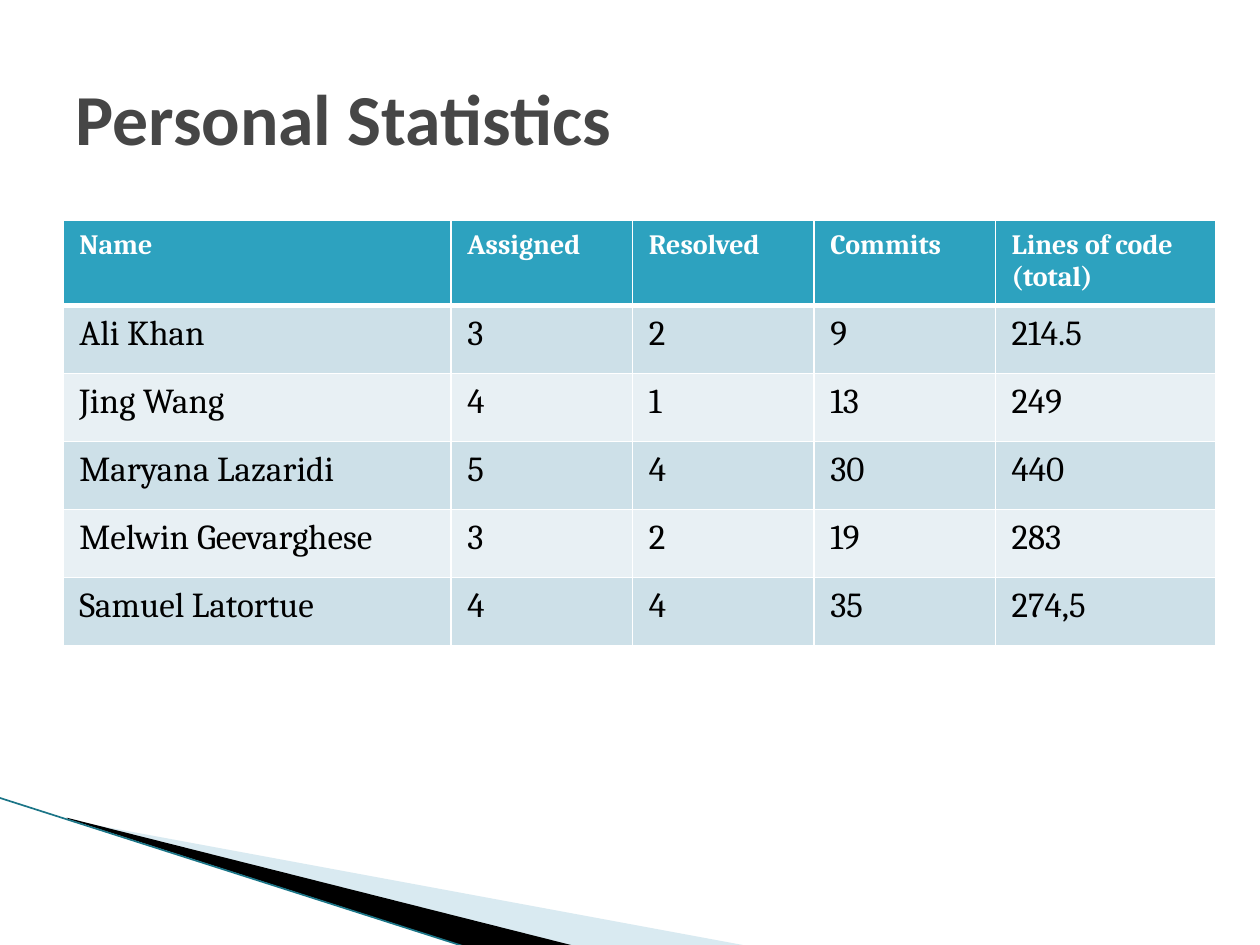
"""Build the Personal Statistics slide with its table and corner ornament."""
import dataclasses

import lxml.etree
import pptx
import pptx.dml.color
import pptx.enum.shapes
import pptx.enum.text
import pptx.oxml.ns
import pptx.util

Inches = pptx.util.Inches
Pt = pptx.util.Pt
qn = pptx.oxml.ns.qn


@dataclasses.dataclass(frozen=True)
class Theme:
    heading_font: str = "Calibri"
    body_font: str = "Cambria"
    title_size: int = 41
    header_size: int = 16
    body_size: int = 20
    title: str = "464646"
    header: str = "2DA2BF"
    bands: tuple = ("CDE0E8", "E8F0F4")
    white: str = "FFFFFF"
    black: str = "000000"
    pale: str = "A0CBDC"
    teal: str = "1B7587"


def rgb(value):
    return pptx.dml.color.RGBColor.from_string(value)


def set_attrs(obj, values):
    for name, value in values.items():
        setattr(obj, name, value)


class SlideBuilder:
    def __init__(self, slide, theme):
        self.slide = slide
        self.theme = theme

    def add_text(self, tf, text, color, **font):
        r = tf.paragraphs[0].add_run()
        r.text = text
        set_attrs(r.font, font)
        r.font.color.rgb = rgb(color)

    def title(self, text, left, top, width, height):
        t = self.theme
        box = self.slide.shapes.add_textbox(
            Inches(left), Inches(top), Inches(width), Inches(height))
        tf = box.text_frame
        set_attrs(tf, {"word_wrap": True,
                       "vertical_anchor": pptx.enum.text.MSO_ANCHOR.MIDDLE})
        self.add_text(tf, text, t.title, name=t.heading_font,
                      size=Pt(t.title_size), bold=True)

    def polygon(self, points, color, alpha=None):
        pts = [(Inches(x), Inches(y)) for x, y in points]
        fb = self.slide.shapes.build_freeform(*pts[0])
        fb.add_line_segments(pts[1:], close=True)
        sp = fb.convert_to_shape()
        sp.shadow.inherit = False
        sp.fill.solid()
        sp.fill.fore_color.rgb = rgb(color)
        sp.line.fill.background()
        if alpha is not None:
            clr = sp._element.spPr.find(".//" + qn("a:srgbClr"))
            lxml.etree.SubElement(clr, qn("a:alpha"), val=str(alpha * 1000))

    def line(self, x1, y1, x2, y2, color, width):
        cx = self.slide.shapes.add_connector(
            pptx.enum.shapes.MSO_CONNECTOR.STRAIGHT,
            Inches(x1), Inches(y1), Inches(x2), Inches(y2))
        cx.line.color.rgb = rgb(color)
        cx.line.width = Pt(width)
        lxml.etree.SubElement(cx._element.spPr, qn("a:effectLst"))

    def borders(self, cell, **widths):
        tc_pr = cell._tc.get_or_add_tcPr()
        for side in "LRTB":
            ln = lxml.etree.SubElement(
                tc_pr, qn("a:ln" + side), w=str(int(Pt(widths.get(side, 1)))))
            fill = lxml.etree.SubElement(ln, qn("a:solidFill"))
            lxml.etree.SubElement(fill, qn("a:srgbClr"), val=self.theme.white)

    def table(self, rows, left, top, col_widths, row_heights):
        t = self.theme
        tbl = self.slide.shapes.add_table(
            len(rows), len(col_widths), Inches(left), Inches(top),
            Inches(sum(col_widths)), Inches(sum(row_heights))).table
        for col, width in zip(tbl.columns, col_widths):
            col.width = Inches(width)
        margins = {"margin_left": Inches(0.13), "margin_right": Inches(0.13),
                   "margin_top": Inches(0.07), "margin_bottom": Inches(0.07)}
        for i, values in enumerate(rows):
            tbl.rows[i].height = Inches(row_heights[i])
            head = i == 0
            heavy = {0: {"B": 3}, 1: {"T": 3}}.get(i, {})
            for j, text in enumerate(values):
                cell = tbl.cell(i, j)
                set_attrs(cell, margins)
                self.borders(cell, **heavy)
                cell.fill.solid()
                cell.fill.fore_color.rgb = rgb(
                    t.header if head else t.bands[(i - 1) % 2])
                self.add_text(cell.text_frame, text,
                              t.white if head else t.black,
                              name=t.body_font, bold=head,
                              size=Pt(t.header_size if head else t.body_size))


def main():
    prs = pptx.Presentation()
    set_attrs(prs, {"slide_width": Inches(10), "slide_height": Inches(7.5)})
    theme = Theme()
    s = SlideBuilder(prs.slides.add_slide(prs.slide_layouts[6]), theme)

    s.polygon([(0.55, 6.51), (5.95, 7.51), (4.56, 7.51), (0.55, 6.5)],
              theme.pale, alpha=40)
    s.polygon([(0.53, 6.49), (4.57, 7.51), (3.72, 7.52), (0.54, 6.5)],
              theme.black)
    s.line(-0.01, 6.33, 3.71, 7.52, theme.teal, 0.95)
    s.title("Personal Statistics", 0.5, 0.3, 9, 1.25)

    rows = [
        ("Name", "Assigned", "Resolved", "Commits", "Lines of code (total)"),
        ("Ali Khan", "3", "2", "9", "214.5"),
        ("Jing Wang", "4", "1", "13", "249"),
        ("Maryana Lazaridi", "5", "4", "30", "440"),
        ("Melwin Geevarghese", "3", "2", "19", "283"),
        ("Samuel Latortue", "4", "4", "35", "274,5"),
    ]
    s.table(rows, 0.5, 1.75, [3.08, 1.44, 1.44, 1.44, 1.75],
            [0.54] * len(rows))
    prs.save("out.pptx")


if __name__ == "__main__":
    main()
